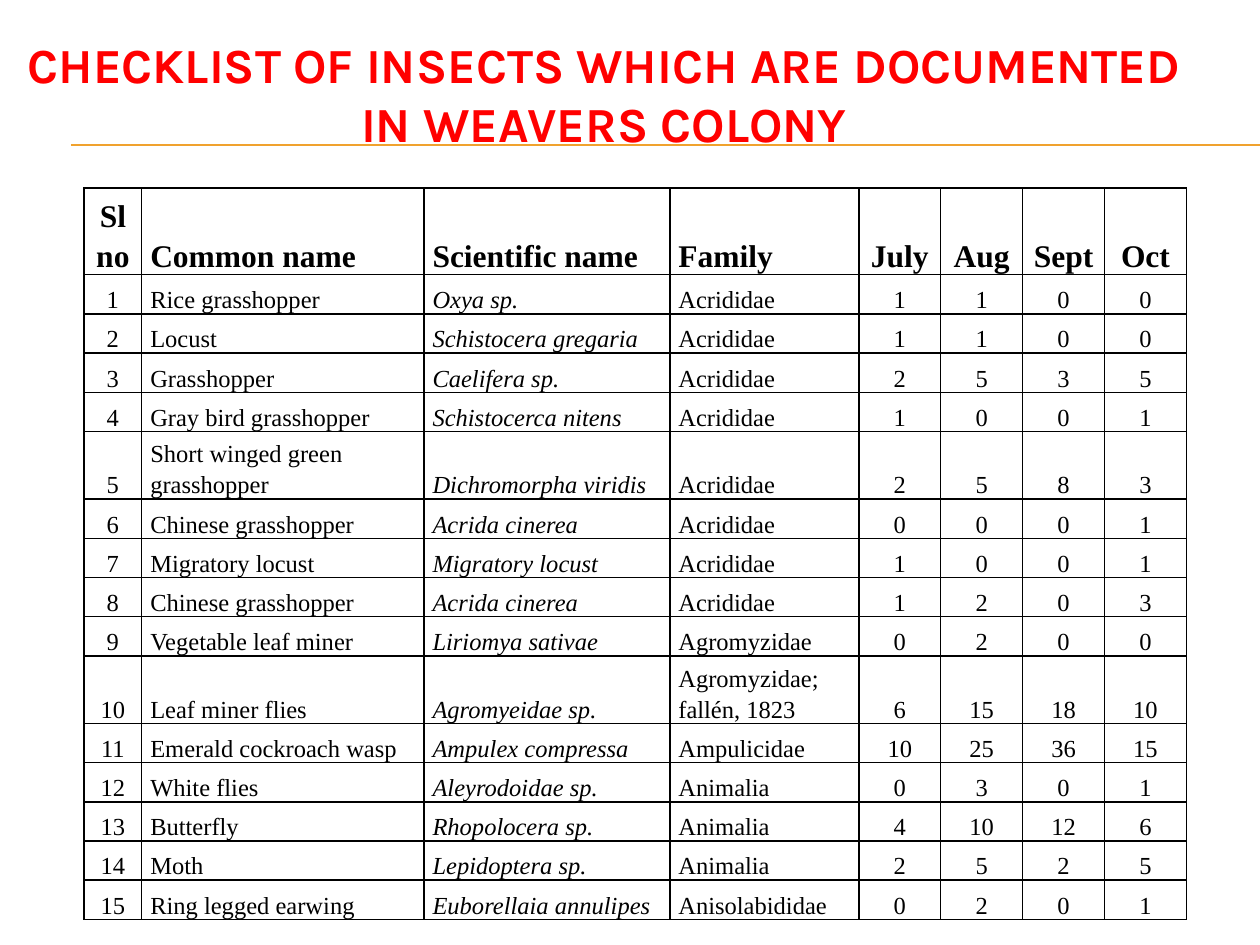
import pptx
import pptx.util
import pptx.dml.color
import pptx.enum.shapes
import pptx.enum.text
import pptx.oxml.ns
import lxml.etree

Pt = pptx.util.Pt
RGB = pptx.dml.color.RGBColor
Align = pptx.enum.text.PP_ALIGN
Anchor = pptx.enum.text.MSO_ANCHOR
qn = pptx.oxml.ns.qn

RED = RGB(0xFF, 0x00, 0x00)
BLACK = RGB(0x00, 0x00, 0x00)
GOLD = RGB(0xF0, 0xA2, 0x2E)

TITLE = "CHECKLIST OF INSECTS WHICH ARE DOCUMENTED IN WEAVERS COLONY"
HEAD = ("Sl no", "Common name", "Scientific name", "Family", "July", "Aug", "Sept", "Oct")
INSECTS = (
    ("Rice grasshopper", "Oxya sp.", "Acrididae", 1, 1, 0, 0),
    ("Locust", "Schistocera gregaria", "Acrididae", 1, 1, 0, 0),
    ("Grasshopper", "Caelifera sp.", "Acrididae", 2, 5, 3, 5),
    ("Gray bird grasshopper", "Schistocerca nitens", "Acrididae", 1, 0, 0, 1),
    ("Short winged green grasshopper", "Dichromorpha viridis", "Acrididae", 2, 5, 8, 3),
    ("Chinese grasshopper", "Acrida cinerea", "Acrididae", 0, 0, 0, 1),
    ("Migratory locust", "Migratory locust", "Acrididae", 1, 0, 0, 1),
    ("Chinese grasshopper", "Acrida cinerea", "Acrididae", 1, 2, 0, 3),
    ("Vegetable leaf miner", "Liriomya sativae", "Agromyzidae", 0, 2, 0, 0),
    ("Leaf miner flies", "Agromyeidae sp.", "Agromyzidae; fallén, 1823", 6, 15, 18, 10),
    ("Emerald cockroach wasp", "Ampulex compressa", "Ampulicidae", 10, 25, 36, 15),
    ("White flies", "Aleyrodoidae sp.", "Animalia", 0, 3, 0, 1),
    ("Butterfly", "Rhopolocera sp.", "Animalia", 4, 10, 12, 6),
    ("Moth", "Lepidoptera sp.", "Animalia", 2, 5, 2, 5),
    ("Ring legged earwing", "Euborellaia annulipes", "Anisolabididae", 0, 2, 0, 1),
)
WIDTHS = (33, 161.3, 140.5, 108) + (46.8,) * 4
HEAD_ROW, ROW, TALL = 41, 22.4, 37.6
TALL_ROWS = (5, 10)
NAMES = (1, 2, 3)
LATIN = 2


class Page:
    """Hold the style and the current slide, and draw each kind of element."""

    def __init__(self, slide):
        self.slide = slide
        self.head = "Karla"
        self.body = "Times New Roman"

    def label(self, para, text, face, size, color, bold=False, slant=False):
        run = para.add_run()
        run.text = text
        font = run.font
        font.name, font.size = face, Pt(size)
        font.bold, font.italic = bold, slant
        font.color.rgb = color

    def rule(self, left, right, y):
        kind = pptx.enum.shapes.MSO_CONNECTOR.STRAIGHT
        line = self.slide.shapes.add_connector(kind, Pt(left), Pt(y), Pt(right), Pt(y))
        line.line.color.rgb = GOLD
        line.line.width = Pt(0.75)
        lxml.etree.SubElement(line._element.spPr, qn("a:effectLst"))

    def title(self, text, left, top, width, height):
        box = self.slide.shapes.add_textbox(Pt(left), Pt(top), Pt(width), Pt(height))
        frame = box.text_frame
        frame.word_wrap = True
        frame.vertical_anchor = Anchor.MIDDLE
        frame.margin_top, frame.margin_bottom = 0, Pt(43)
        para = frame.paragraphs[0]
        para.alignment = Align.CENTER
        para.line_spacing = Pt(33.7)
        self.label(para, text, self.head, 28, RED, bold=True)

    def border(self, cell):
        props = cell._tc.get_or_add_tcPr()
        for i, side in enumerate(("lnL", "lnR", "lnT", "lnB")):
            line = lxml.etree.Element(qn("a:" + side), w=str(Pt(1)))
            fill = lxml.etree.SubElement(line, qn("a:solidFill"))
            lxml.etree.SubElement(fill, qn("a:srgbClr"), val=str(BLACK))
            props.insert(i, line)

    def cell(self, cell, text, size, bold, slant, align):
        cell.fill.background()
        cell.vertical_anchor = Anchor.BOTTOM
        cell.margin_left = cell.margin_right = Pt(4.9)
        cell.margin_top = cell.margin_bottom = 0
        para = cell.text_frame.paragraphs[0]
        para.alignment = align
        para.line_spacing = 1.15
        self.label(para, text, self.body, size, BLACK, bold, slant)
        self.border(cell)

    def table(self, rows, left, top, widths, heights):
        frame = self.slide.shapes.add_table(
            len(rows), len(widths), Pt(left), Pt(top), Pt(sum(widths)), Pt(sum(heights)))
        grid = frame.table
        grid.first_row = grid.horz_banding = False
        for col, width in zip(grid.columns, widths):
            col.width = Pt(width)
        for r, (row, height) in enumerate(zip(rows, heights)):
            grid.rows[r].height = Pt(height)
            for c, value in enumerate(row):
                top_row = r == 0
                align = Align.LEFT if c in NAMES else Align.CENTER
                self.cell(grid.cell(r, c), str(value), 18 if top_row else 14,
                          top_row, c == LATIN and not top_row, align)


def main():
    deck = pptx.Presentation()
    deck.slide_width, deck.slide_height = Pt(720), Pt(540)
    page = Page(deck.slides.add_slide(deck.slide_layouts[6]))
    for y in (82.8, 83.3):
        page.rule(40.5, 720, y)
    page.title(TITLE, 0, 41.8, 690, 66.2)
    rows = [HEAD] + [(n, *insect) for n, insect in enumerate(INSECTS, 1)]
    heights = [HEAD_ROW] + [TALL if n in TALL_ROWS else ROW for n in range(1, len(rows))]
    page.table(rows, 48, 107.3, WIDTHS, heights)
    deck.save("out.pptx")


if __name__ == "__main__":
    main()
